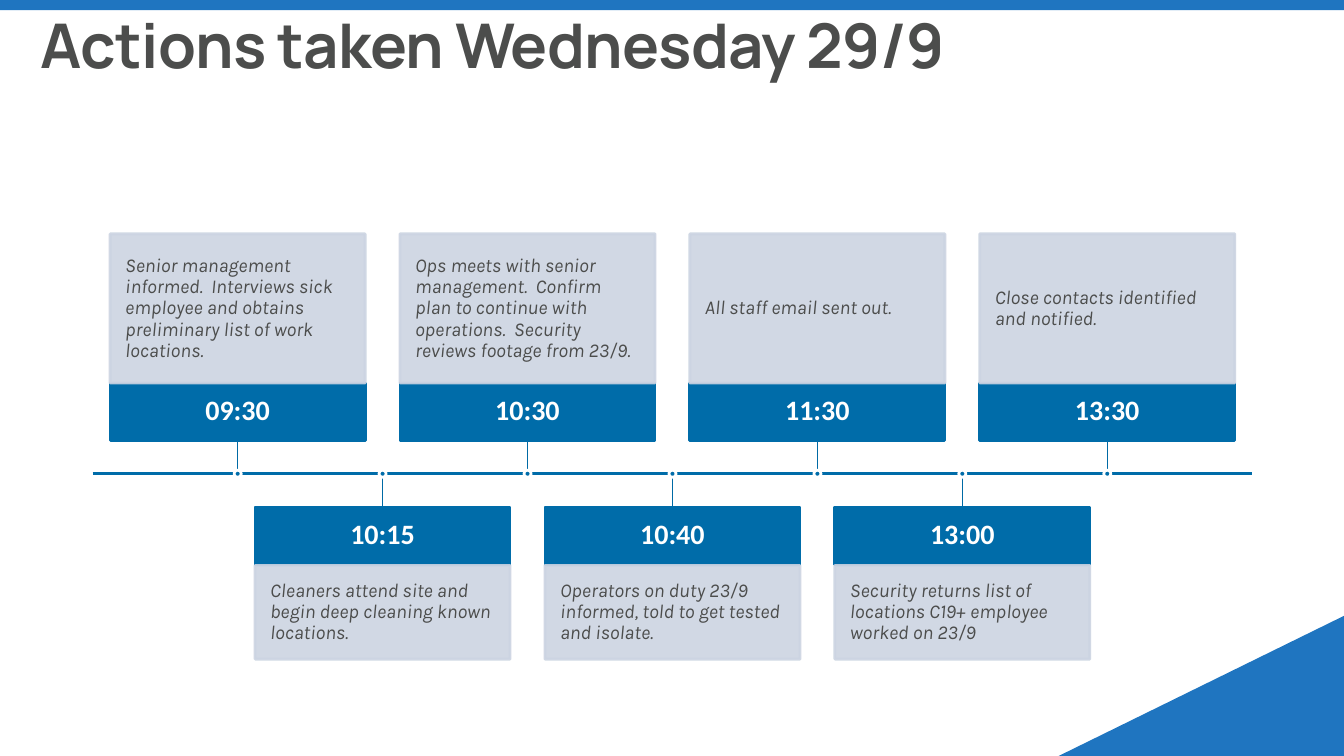
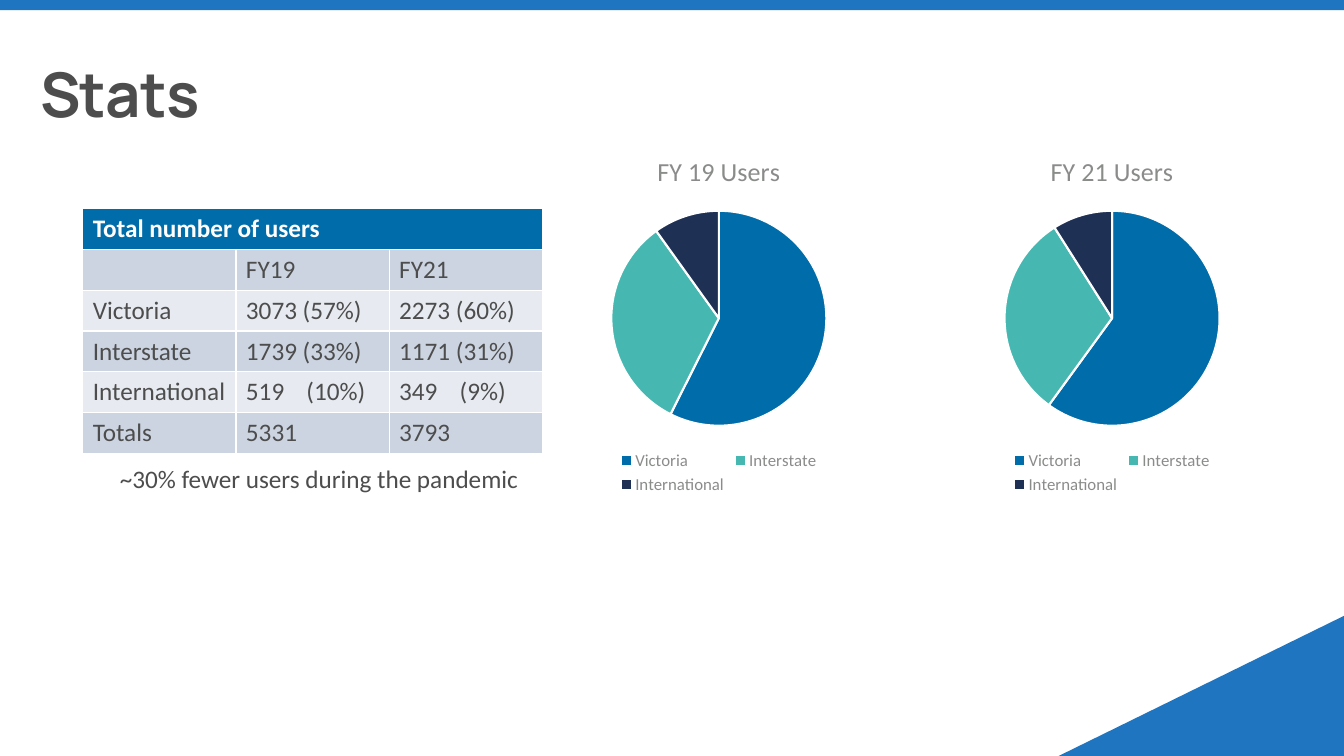
"""Build a two-slide report: an action timeline and user statistics."""
from lxml.etree import SubElement
from pptx import Presentation
from pptx.chart.data import CategoryChartData as ChartData
from pptx.dml.color import RGBColor
from pptx.enum.chart import XL_CHART_TYPE as CHART, XL_LEGEND_POSITION as LEGEND
from pptx.enum.shapes import MSO_CONNECTOR as LINK, MSO_SHAPE as SHAPE
from pptx.enum.text import MSO_ANCHOR as ANCHOR, PP_ALIGN as ALIGN
from pptx.oxml.ns import qn
from pptx.util import Inches, Pt

BAND = RGBColor(0x1F, 0x75, 0xC0)
BLUE = RGBColor(0x00, 0x6C, 0xA9)
STEM = RGBColor(0x00, 0x6A, 0xA5)
TEAL = RGBColor(0x47, 0xB7, 0xB1)
NAVY = RGBColor(0x1E, 0x30, 0x54)
PALE = RGBColor(0xCC, 0xD4, 0xE2)
LIGHT = RGBColor(0xE7, 0xEB, 0xF1)
INK = RGBColor(0x4C, 0x4D, 0x4C)
GREY = RGBColor(0x8A, 0x8C, 0x8A)
WHITE = RGBColor(0xFF, 0xFF, 0xFF)

TITLE = dict(name="Manrope", size=Pt(44), bold=True)
TIME = dict(name="Calibri", size=Pt(20), bold=True)
NOTE = dict(name="Karla", size=Pt(14), italic=True)
BODY = dict(name="Calibri", size=Pt(18), bold=False)
HEAD = dict(BODY, bold=True)
KEY = dict(name="Calibri", size=Pt(12), bold=False)
CAPTION = dict(name="Calibri", size=Pt(18.6), bold=False)


def style(font, look, color):
    for key, value in look.items():
        setattr(font, key, value)
    font.color.rgb = color


def draw(slide, kind, box, fill, edge=None):
    shape = slide.shapes.add_shape(kind, *map(Inches, box))
    shape.shadow.inherit = False
    shape.fill.solid()
    shape.fill.fore_color.rgb = fill
    if edge is None:
        shape.line.fill.background()
    else:
        shape.line.color.rgb = edge
        shape.line.width = Pt(2)
    return shape


deck = Presentation()
deck.slide_width, deck.slide_height = Inches(13.33), Inches(7.5)

slides = []
for text, anchor in (("Actions taken Wednesday 29/9", ANCHOR.TOP), ("Stats", ANCHOR.BOTTOM)):
    slide = deck.slides.add_slide(deck.slide_layouts[6])
    slides.append(slide)
    corner = draw(slide, SHAPE.RIGHT_TRIANGLE, (10.5, 6.11, 2.83, 1.39), BAND)
    corner._element.spPr.xfrm.set("flipH", "1")
    draw(slide, SHAPE.RECTANGLE, (0, 0, 13.33, 0.1), BAND)
    frame = slide.shapes.add_textbox(*map(Inches, (0.3, 0.1, 12.36, 1.25))).text_frame
    frame.word_wrap = True
    frame.vertical_anchor = anchor
    para = frame.paragraphs[0]
    para.line_spacing = 0.9
    run = para.add_run()
    run.text = text
    style(run.font, TITLE, INK)
    run._r.get_or_add_rPr().set("spc", "-50")
plan, stats = slides

EVENTS = (
    ("09:30", "Senior management informed.  Interviews sick employee and obtains preliminary list of work locations."),
    ("10:15", "Cleaners attend site and begin deep cleaning known locations."),
    ("10:30", "Ops meets with senior management.  Confirm plan to continue with operations.  Security reviews footage from 23/9."),
    ("10:40", "Operators on duty 23/9 informed, told to get tested and isolate."),
    ("11:30", "All staff email sent out."),
    ("13:00", "Security returns list of locations C19+ employee worked on 23/9"),
    ("13:30", "Close contacts identified and notified."),
)
LEFT, RIGHT, AXIS = 0.92, 12.42, 4.7
WIDE, DOT = 2.53, 0.07
step = (RIGHT - LEFT) / (len(EVENTS) + 1)
mids = [LEFT + step * (i + 1) for i in range(len(EVENTS))]

lines = [(LEFT, AXIS, RIGHT, AXIS, BLUE, 2)]
for i, mid in enumerate(mids):
    lines.append((mid, AXIS, mid, 5.03 if i % 2 else 4.37, STEM, 0.75))
for *ends, color, width in lines:
    link = plan.shapes.add_connector(LINK.STRAIGHT, *map(Inches, ends))
    link.line.color.rgb = color
    link.line.width = Pt(width)
    SubElement(link._element.spPr, qn("a:effectLst"))

for i, (mid, (time, note)) in enumerate(zip(mids, EVENTS)):
    left = mid - WIDE / 2
    time_top, note_top, note_high = (5.03, 5.61, 0.93) if i % 2 else (3.8, 2.32, 1.48)
    for text, top, high, fill, look, color, inset, align in (
        (time, time_top, 0.57, BLUE, TIME, WHITE, 0.11, ALIGN.CENTER),
        (note, note_top, note_high, PALE, NOTE, INK, 0.15, ALIGN.LEFT),
    ):
        card = draw(plan, SHAPE.RECTANGLE, (left, top, WIDE, high), fill, fill)
        if fill == PALE:
            for tint in card._element.spPr.iter(qn("a:srgbClr")):
                SubElement(tint, qn("a:alpha"), val="90000")
        frame = card.text_frame
        frame.word_wrap = True
        frame.vertical_anchor = ANCHOR.MIDDLE
        for side in ("left", "top", "right", "bottom"):
            setattr(frame, "margin_" + side, Inches(inset))
        para = frame.paragraphs[0]
        para.text = text
        para.alignment = align
        para.line_spacing = 0.9
        style(para.font, look, color)
    draw(plan, SHAPE.OVAL, (mid - DOT / 2, AXIS - DOT / 2, DOT, DOT), BLUE, WHITE)

PLACES = ("Victoria", "Interstate", "International")
for name, left, values in (("FY 19 Users", 5.38, (58, 33, 10)), ("FY 21 Users", 9.28, (60, 31, 9))):
    data = ChartData()
    data.categories = PLACES
    data.add_series(name, values)
    box = map(Inches, (left, 1.35, 3.5, 3.6))
    chart = stats.shapes.add_chart(CHART.PIE, *box, data).chart
    style(chart.font, dict(name="Calibri", size=Pt(10)), INK)
    chart.has_title = True
    para = chart.chart_title.text_frame.paragraphs[0]
    para.text = name
    style(para.runs[0].font, CAPTION, GREY)
    chart.chart_title.include_in_layout = False
    chart.has_legend = True
    chart.legend.position = LEGEND.BOTTOM
    chart.legend.include_in_layout = False
    style(chart.legend.font, KEY, GREY)
    pie = chart.plots[0]
    pie.vary_by_categories = True
    for i, color in enumerate((BLUE, TEAL, NAVY)):
        part = pie.series[0].points[i].format
        part.fill.solid()
        part.fill.fore_color.rgb = color
        part.line.color.rgb = WHITE
        part.line.width = Pt(1.5)

ROWS = (
    ("Total number of users", "", ""),
    ("", "FY19", "FY21"),
    ("Victoria", "3073 (57%)", "2273 (60%)"),
    ("Interstate", "1739 (33%)", "1171 (31%)"),
    ("International", "519\t(10%)", "349\t(9%)"),
    ("Totals", "5331", "3793"),
)
box = map(Inches, (0.82, 2.07, 4.56, 2.43))
table = stats.shapes.add_table(len(ROWS), 3, *box).table
table.cell(0, 0).merge(table.cell(0, 2))
for r, row in enumerate(ROWS):
    for c, text in enumerate(row):
        cell = table.cell(r, c)
        cell.fill.solid()
        cell.fill.fore_color.rgb = (PALE if r % 2 else LIGHT) if r else BLUE
        para = cell.text_frame.paragraphs[0]
        para.text = text
        if "\t" in text:
            tabs = SubElement(para._p.get_or_add_pPr(), qn("a:tabLst"))
            SubElement(tabs, qn("a:tab"), pos=str(Inches(0.6)), algn="l")
        style(para.font, BODY if r else HEAD, INK if r else WHITE)

frame = stats.shapes.add_textbox(*map(Inches, (1.09, 4.55, 4.21, 0.4))).text_frame
frame.word_wrap = True
para = frame.paragraphs[0]
para.text = "~30% fewer users during the pandemic"
style(para.font, BODY, INK)

deck.save("out.pptx")
